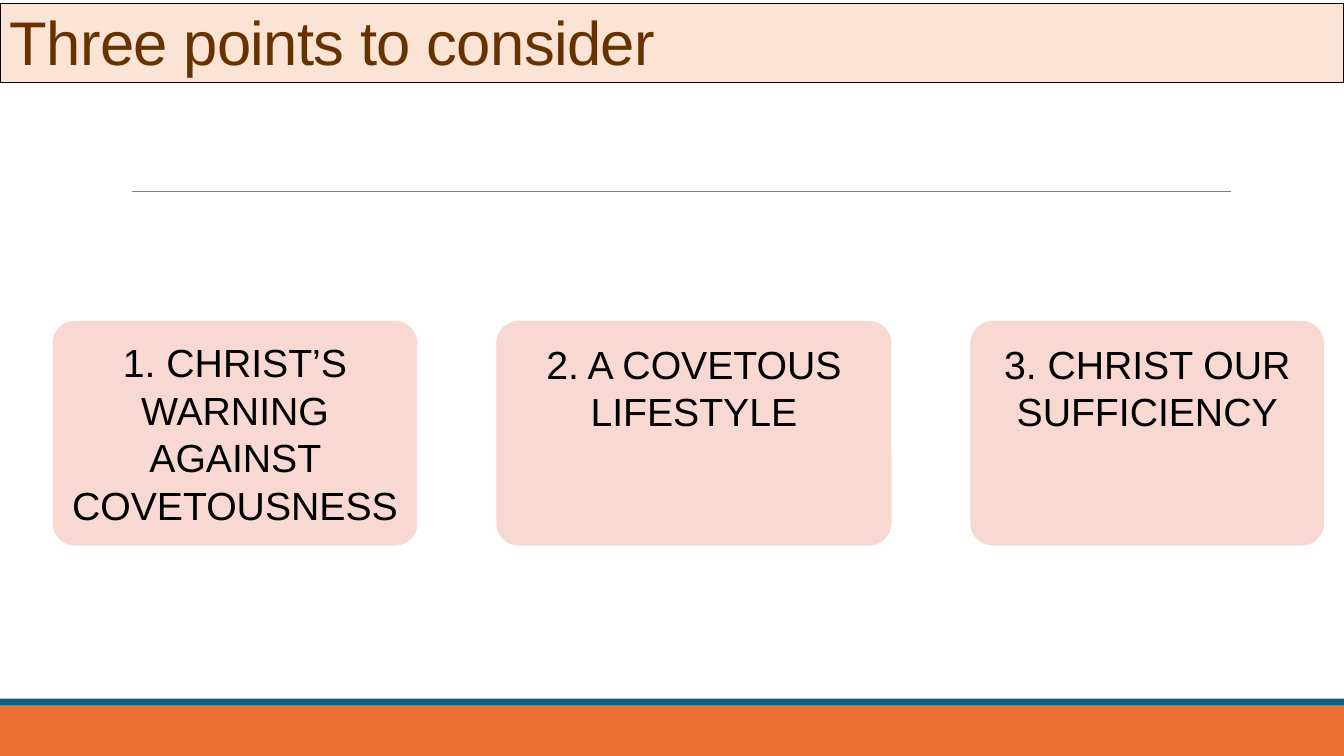
"""Build a slide with a title band and three points to consider."""
from pptx import Presentation
from pptx.dml.color import RGBColor
from pptx.enum.shapes import MSO_CONNECTOR, MSO_SHAPE
from pptx.enum.text import MSO_ANCHOR, PP_ALIGN
from pptx.oxml.ns import qn
from pptx.util import Pt
from lxml.etree import SubElement

TITLE = "Three points to consider"
POINTS = [
    ("1. CHRIST’S WARNING AGAINST COVETOUSNESS", 260.7, MSO_ANCHOR.MIDDLE),
    ("2. A COVETOUS LIFESTYLE", 282.3, MSO_ANCHOR.TOP),
    ("3. CHRIST OUR SUFFICIENCY", 252.7, MSO_ANCHOR.TOP),
]
COLORS = {
    "foot": "E97132", "stripe": "156082", "rule": "808080", "band": "FBE3D6",
    "title": "663300", "card": "F7D5CE", "text": "000000", "edge": "000000",
}
FONT = "Arial"
WIDE, HIGH = 960, 540
FOOT, STRIPE = 36, 5
LEFT, TOP, TALL, GAP = 37.5, 229.2, 160.5, 56.3


def color(name):
    """Return the named color."""
    return RGBColor.from_string(COLORS[name])


def add_box(slide, kind, box, fill):
    """Add a filled shape without outline or shadow."""
    shape = slide.shapes.add_shape(kind, *map(Pt, box))
    shape.shadow.inherit = False
    shape.fill.solid()
    shape.fill.fore_color.rgb = color(fill)
    shape.line.fill.background()
    return shape


def set_text(shape, text, size, ink, align, space, anchor):
    """Write one styled paragraph and return its run."""
    frame = shape.text_frame
    frame.text = text
    frame.word_wrap = True
    frame.vertical_anchor = anchor
    para = frame.paragraphs[0]
    para.alignment = align
    para.line_spacing = space
    run = para.runs[0]
    run.font.name = FONT
    run.font.size = Pt(size)
    run.font.color.rgb = color(ink)
    return run


def add_rule(slide):
    """Draw the thin line below the title."""
    rule = slide.shapes.add_connector(
        MSO_CONNECTOR.STRAIGHT, Pt(94.5), Pt(136.6), Pt(879), Pt(136.6))
    rule.line.color.rgb = color("rule")
    rule.line.width = Pt(0.5)
    SubElement(rule.element.spPr, qn("a:effectLst"))


def add_title(slide):
    """Add the title band."""
    band = add_box(slide, MSO_SHAPE.RECTANGLE, (0, 2.6, WIDE, 56.6), "band")
    band.line.color.rgb = color("edge")
    band.line.width = Pt(0.75)
    run = set_text(band, TITLE, 44, "title", PP_ALIGN.JUSTIFY, 0.85,
                   MSO_ANCHOR.BOTTOM)
    run.font.element.set("spc", "-50") if hasattr(run.font, "element") else \
        run._r.get_or_add_rPr().set("spc", "-50")


def add_cards(slide):
    """Add the point cards from left to right."""
    left = LEFT
    for text, width, anchor in POINTS:
        card = add_box(slide, MSO_SHAPE.ROUNDED_RECTANGLE,
                       (left, TOP, width, TALL), "card")
        card.adjustments[0] = 0.1
        tint = card.element.spPr.find(qn("a:solidFill"))[0]
        SubElement(tint, qn("a:alpha"), val="90000")
        frame = card.text_frame
        frame.margin_left = frame.margin_right = Pt(8.4)
        frame.margin_top = frame.margin_bottom = Pt(8.6)
        set_text(card, text, 28, "text", PP_ALIGN.CENTER, 1.01, anchor)
        frame.paragraphs[0].space_after = Pt(4)
        left += width + GAP


def main():
    """Build and save the slide."""
    deck = Presentation()
    deck.slide_width, deck.slide_height = Pt(WIDE), Pt(HIGH)
    slide = deck.slides.add_slide(deck.slide_layouts[6])
    base = HIGH - FOOT
    add_box(slide, MSO_SHAPE.RECTANGLE, (0, base, WIDE, FOOT), "foot")
    add_box(slide, MSO_SHAPE.RECTANGLE, (0, base - STRIPE, WIDE, STRIPE), "stripe")
    add_rule(slide)
    add_title(slide)
    add_cards(slide)
    deck.save("out.pptx")


if __name__ == "__main__":
    main()
